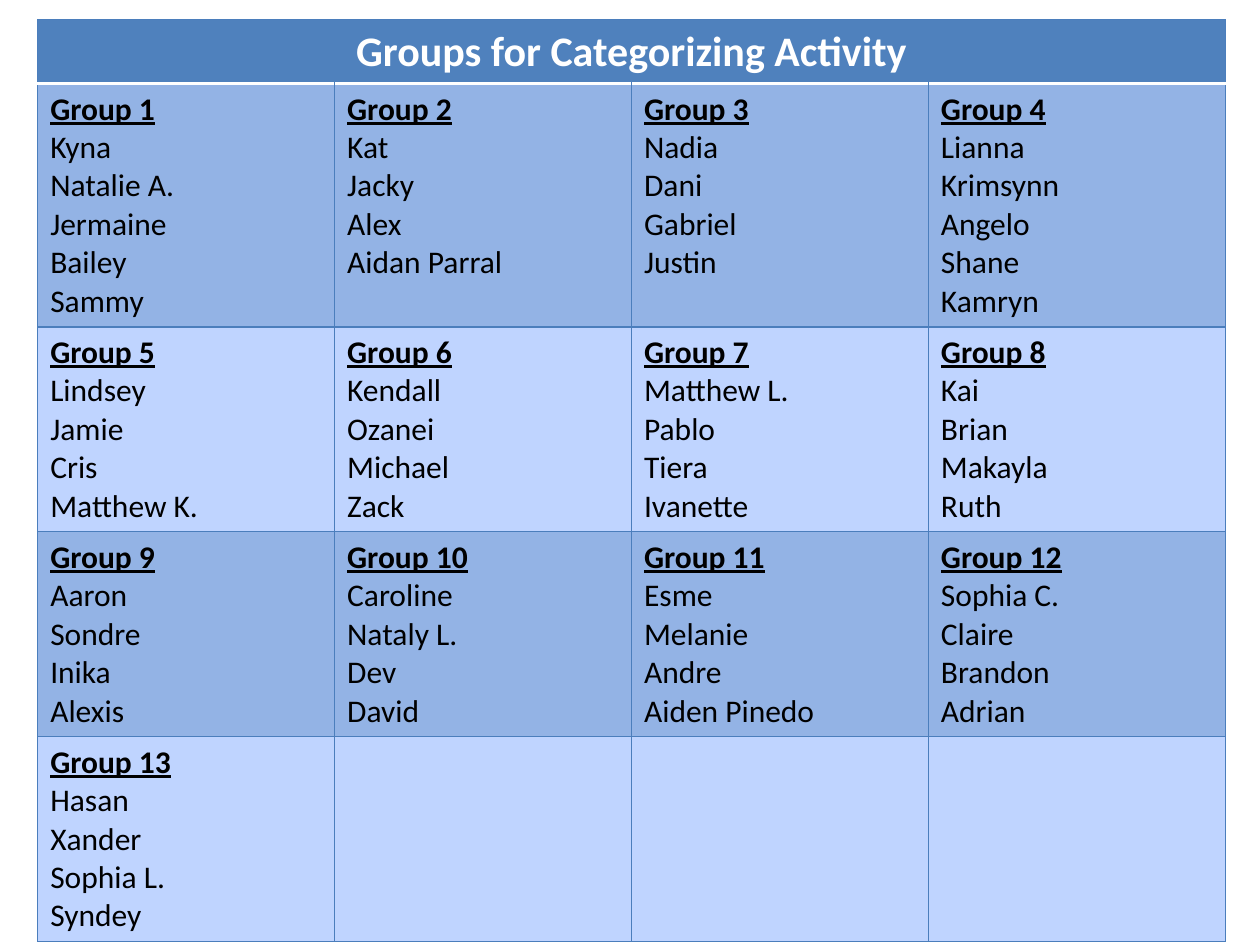
from lxml import etree
from pptx import Presentation
from pptx import util as u
from pptx.dml.color import RGBColor
from pptx.enum import text
from pptx.oxml import ns

HEADER_BLUE = RGBColor(0x4F, 0x81, 0xBD)
BORDER_BLUE = RGBColor(0x4B, 0x7E, 0xBC)
MID_BLUE = RGBColor(0x93, 0xB3, 0xE5)
PALE_BLUE = RGBColor(0xBF, 0xD4, 0xFF)
WHITE = RGBColor(0xFF, 0xFF, 0xFF)
BLACK = RGBColor(0x00, 0x00, 0x00)

HEADING = "Groups for Categorizing Activity"
COLUMNS = 4
GROUPS = [
    ["Kyna", "Natalie A.", "Jermaine", "Bailey", "Sammy"],
    ["Kat", "Jacky", "Alex", "Aidan Parral"],
    ["Nadia", "Dani", "Gabriel", "Justin"],
    ["Lianna", "Krimsynn", "Angelo", "Shane", "Kamryn"],
    ["Lindsey", "Jamie", "Cris", "Matthew K."],
    ["Kendall", "Ozanei", "Michael", "Zack"],
    ["Matthew L.", "Pablo", "Tiera", "Ivanette"],
    ["Kai", "Brian", "Makayla", "Ruth"],
    ["Aaron", "Sondre", "Inika", "Alexis"],
    ["Caroline", "Nataly L.", "Dev", "David"],
    ["Esme", "Melanie", "Andre", "Aiden Pinedo"],
    ["Sophia C.", "Claire", "Brandon", "Adrian"],
    ["Hasan", "Xander", "Sophia L.", "Syndey"],
]


class GroupSlide:
    """Holds the text style and the slide, and builds the table of groups."""

    font = "Calibri"

    def __init__(self, slide):
        self.slide = slide

    def line_of_text(self, paragraph, words, size, color, bold=False, underline=False):
        paragraph.text = words
        font = paragraph.font
        font.name, font.size = self.font, u.Pt(size)
        font.bold, font.underline = bold, underline
        font.color.rgb = color

    def border(self, cell, side, color, width):
        properties = cell._tc.get_or_add_tcPr()
        line = etree.SubElement(properties, ns.qn(f"a:ln{side}"), w=str(u.Pt(width)))
        fill = etree.SubElement(line, ns.qn("a:solidFill"))
        etree.SubElement(fill, ns.qn("a:srgbClr"), val=str(color))

    def paint(self, cell, fill, white_side):
        for side in "LRTB":
            color, width = (WHITE, 2) if side == white_side else (BORDER_BLUE, 0.75)
            self.border(cell, side, color, width)
        cell.fill.solid()
        cell.fill.fore_color.rgb = fill

    def group(self, cell, number, members):
        frame = cell.text_frame
        self.line_of_text(frame.paragraphs[0], f"Group {number}", 18, BLACK, True, True)
        for member in members:
            self.line_of_text(frame.add_paragraph(), member, 18, BLACK)

    def table(self, heading, groups):
        row_count = 1 + -(-len(groups) // COLUMNS)
        frame = self.slide.shapes.add_table(
            row_count, COLUMNS, u.Cm(0.76), u.Cm(0.4), u.Cm(23.94), u.Cm(18.29))
        table = frame.table
        for index, row in enumerate(table.rows):
            row.height = u.Cm(3.28 if index else 1.25)
            fill = PALE_BLUE if index % 2 == 0 else MID_BLUE
            for cell in row.cells:
                self.paint(cell, fill if index else HEADER_BLUE, {0: "B", 1: "T"}.get(index))
        frame.height = u.Cm(18.29)

        title = table.cell(0, 0)
        title.merge(table.cell(0, COLUMNS - 1))
        paragraph = title.text_frame.paragraphs[0]
        self.line_of_text(paragraph, heading, 24, WHITE, True)
        paragraph.alignment = text.PP_ALIGN.CENTER

        for index, members in enumerate(groups):
            row, column = divmod(index, COLUMNS)
            self.group(table.cell(row + 1, column), index + 1, members)


def main():
    presentation = Presentation()
    presentation.slide_width, presentation.slide_height = u.Cm(25.4), u.Cm(19.05)
    blank = presentation.slide_layouts[6]
    GroupSlide(presentation.slides.add_slide(blank)).table(HEADING, GROUPS)
    presentation.save("out.pptx")


if __name__ == "__main__":
    main()
